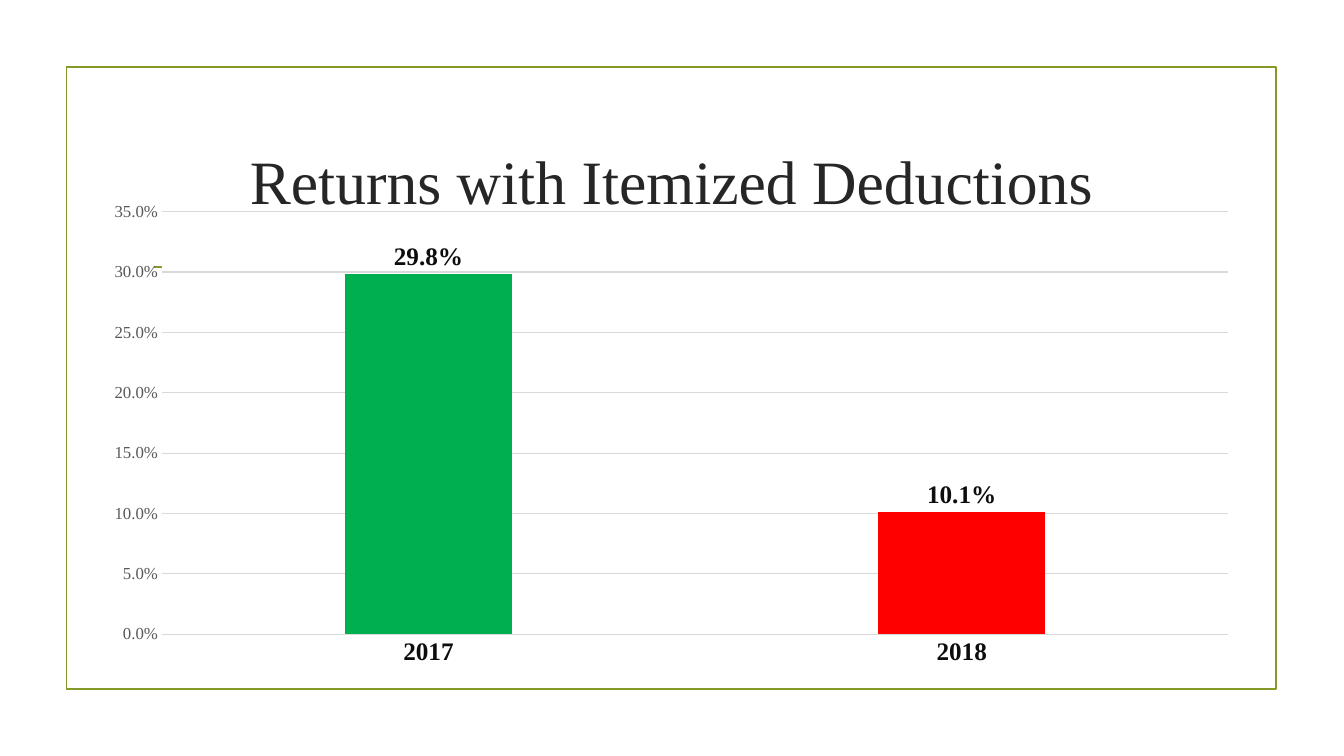
from dataclasses import dataclass

from lxml.etree import SubElement
from pptx import Presentation
from pptx.chart.data import CategoryChartData
from pptx.dml.color import RGBColor
from pptx.enum.chart import XL_CHART_TYPE, XL_LABEL_POSITION, XL_TICK_MARK
from pptx.enum.shapes import MSO_CONNECTOR, MSO_SHAPE
from pptx.enum.text import MSO_ANCHOR, PP_ALIGN
from pptx.oxml import parse_xml
from pptx.oxml.ns import nsdecls, qn
from pptx.util import Pt


@dataclass(frozen=True)
class Theme:
    """Colours, font and type sizes of the slide."""

    font: str = "Times New Roman"
    olive: str = "83992A"
    title: str = "262626"
    label: str = "0D0D0D"
    muted: str = "595959"
    grid: str = "D9D9D9"
    white: str = "FFFFFF"
    green: str = "00B050"
    red: str = "FF0000"
    title_size: float = 44
    label_size: float = 18
    axis_size: float = 12
    border: float = 1.25
    hairline: float = 0.75


THEME = Theme()


def set_font(font, size, color, bold=False):
    """Apply the theme font with a size, colour and weight."""
    font.name = THEME.font
    font.size = Pt(size)
    font.bold = bold
    font.color.rgb = RGBColor.from_string(color)


def set_line(line, color, width):
    """Give a line its colour and width."""
    line.color.rgb = RGBColor.from_string(color)
    line.width = Pt(width)


def set_fill(fill, color):
    """Give a solid fill its colour."""
    fill.solid()
    fill.fore_color.rgb = RGBColor.from_string(color)


def add_text(slide, text, *, left, top, width, height, size, color,
             align=PP_ALIGN.CENTER, anchor=MSO_ANCHOR.MIDDLE):
    """Add a wrapped text box with one formatted paragraph."""
    shape = slide.shapes.add_textbox(Pt(left), Pt(top), Pt(width), Pt(height))
    frame = shape.text_frame
    frame.word_wrap = True
    frame.vertical_anchor = anchor
    paragraph = frame.paragraphs[0]
    paragraph.alignment = align
    run = paragraph.add_run()
    run.text = text
    set_font(run.font, size, color)


def add_frame(slide, left, top, width, height):
    """Add the unfilled border around the content."""
    shape = slide.shapes.add_shape(
        MSO_SHAPE.RECTANGLE, Pt(left), Pt(top), Pt(width), Pt(height))
    shape.shadow.inherit = False
    shape.fill.background()
    set_line(shape.line, THEME.olive, THEME.border)


def add_rule(slide, left, right, top):
    """Add a horizontal rule without a shadow."""
    rule = slide.shapes.add_connector(
        MSO_CONNECTOR.STRAIGHT, Pt(left), Pt(top), Pt(right), Pt(top))
    set_line(rule.line, THEME.olive, THEME.border)
    SubElement(rule._element.spPr, qn("a:effectLst"))


def style_plot_area(chart, x, y, w, h):
    """Place the inner plot area by fractions and fill it white."""
    area = chart._chartSpace.chart.plotArea
    for layout in area.findall(qn("c:layout")):
        area.remove(layout)
    settings = {"layoutTarget": "inner", "xMode": "edge", "yMode": "edge",
                "x": x, "y": y, "w": w, "h": h}
    children = "".join(f'<c:{tag} val="{value}"/>' for tag, value in settings.items())
    area.insert(0, parse_xml(
        f'<c:layout {nsdecls("c")}><c:manualLayout>{children}</c:manualLayout></c:layout>'))
    area.append(parse_xml(
        f'<c:spPr {nsdecls("c", "a")}><a:solidFill><a:srgbClr val="{THEME.white}"/>'
        '</a:solidFill><a:ln><a:noFill/></a:ln></c:spPr>'))


def style_axes(chart):
    """Format the year axis, the percentage axis and the gridlines."""
    years, shares = chart.category_axis, chart.value_axis
    for axis in (years, shares):
        axis.major_tick_mark = XL_TICK_MARK.NONE
        axis.minor_tick_mark = XL_TICK_MARK.NONE
    set_font(years.tick_labels.font, THEME.label_size, THEME.label, bold=True)
    set_line(years.format.line, THEME.grid, THEME.hairline)
    set_font(shares.tick_labels.font, THEME.axis_size, THEME.muted)
    shares.format.line.fill.background()
    shares.minimum_scale, shares.maximum_scale, shares.major_unit = 0, 0.35, 0.05
    shares.tick_labels.number_format = "0.0%"
    shares.tick_labels.number_format_is_linked = False
    set_line(shares.major_gridlines.format.line, THEME.grid, THEME.hairline)


def add_column_chart(slide, shares, colors, left, top, width, height):
    """Add a column chart with one colour and label per column."""
    data = CategoryChartData(number_format="0.0%")
    data.categories = list(shares)
    data.add_series("Series 1", list(shares.values()))
    chart = slide.shapes.add_chart(
        XL_CHART_TYPE.COLUMN_CLUSTERED,
        Pt(left), Pt(top), Pt(width), Pt(height), data).chart
    chart.has_legend = False
    chart.has_title = False
    chart.font.name = THEME.font
    style_axes(chart)
    plot = chart.plots[0]
    plot.vary_by_categories = False
    plot.gap_width = 219
    plot.overlap = -27
    series = plot.series[0]
    set_fill(series.format.fill, THEME.olive)
    for index, color in enumerate(colors):
        set_fill(series.points[index].format.fill, color)
    labels = series.data_labels
    labels.show_value = True
    labels.position = XL_LABEL_POSITION.OUTSIDE_END
    set_font(labels.font, THEME.label_size, THEME.label, bold=True)
    style_plot_area(chart, 0.06, 0.04, 0.92, 0.88)


def main():
    """Build the slide and save it."""
    presentation = Presentation()
    presentation.slide_width = Pt(960)
    presentation.slide_height = Pt(540)
    slide = presentation.slides.add_slide(presentation.slide_layouts[6])
    add_frame(slide, 47.5, 48, 864, 444)
    add_rule(slide, 110, 850, 190.8)
    add_text(slide, "Returns with Itemized Deductions", left=102, top=77,
             width=756, height=103, size=THEME.title_size, color=THEME.title)
    add_column_chart(slide, {"2017": 0.298, "2018": 0.101},
                     (THEME.green, THEME.red), 66, 137.5, 828, 343)
    presentation.save("out.pptx")


if __name__ == "__main__":
    main()
